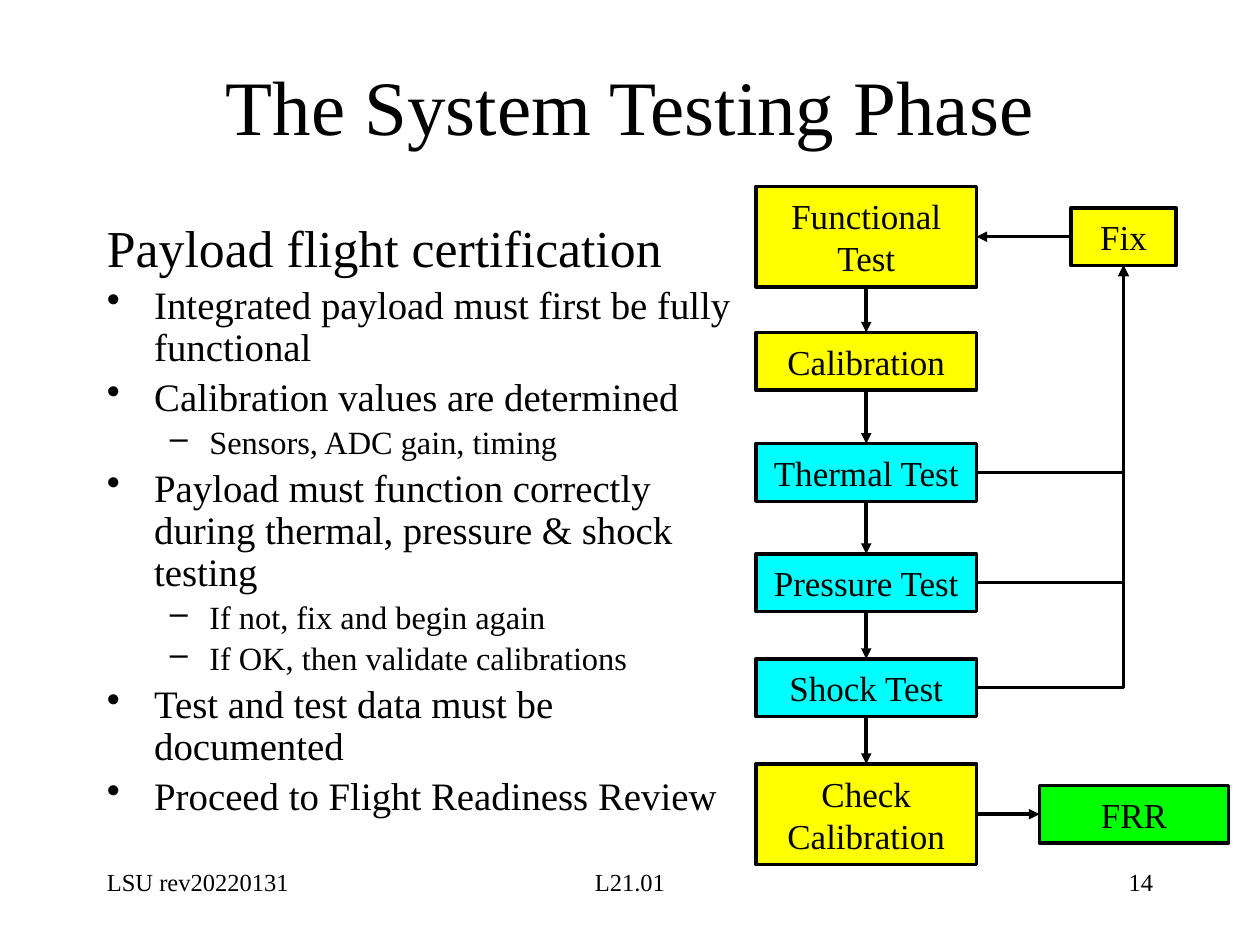
from itertools import pairwise

from lxml import etree
from pptx import Presentation
from pptx.dml.color import RGBColor
from pptx.enum.shapes import MSO_CONNECTOR, MSO_SHAPE
from pptx.enum.text import MSO_ANCHOR, PP_ALIGN
from pptx.oxml.ns import qn
from pptx.util import Pt

RECTANGLE = MSO_SHAPE.RECTANGLE
STRAIGHT, ELBOW = MSO_CONNECTOR.STRAIGHT, MSO_CONNECTOR.ELBOW
LEFT, CENTER, RIGHT = PP_ALIGN.LEFT, PP_ALIGN.CENTER, PP_ALIGN.RIGHT
TOP, MIDDLE = MSO_ANCHOR.TOP, MSO_ANCHOR.MIDDLE
TOP_SIDE, LEFT_SIDE, BOTTOM_SIDE, RIGHT_SIDE = range(4)

COLORS = {"ink": "000000", "step": "FFFF00", "test": "00FFFF", "done": "00FF00"}

# Outline level: (size, left margin, first-line indent, bullet, line spacing)
LEVELS = [
    (29.6, 0, 0, None, 1.0),
    (22.2, 27, -27, "•", 0.9),
    (18.5, 58.5, -22.5, "–", 0.9),
]
OUTLINE = [
    (0, "Payload flight certification"),
    (1, "Integrated payload must first be fully functional"),
    (1, "Calibration values are determined"),
    (2, "Sensors, ADC gain, timing"),
    (1, "Payload must function correctly during thermal, pressure & shock testing"),
    (2, "If not, fix and begin again"),
    (2, "If OK, then validate calibrations"),
    (1, "Test and test data must be documented"),
    (1, "Proceed to Flight Readiness Review"),
]

STEP_LEFT, STEP_WIDTH = 432, 126
ONE_LINE, TWO_LINES = 33, 57.5
STEPS = [
    ("Functional Test", 106.5, TWO_LINES, "step"),
    ("Calibration", 190, ONE_LINE, "step"),
    ("Thermal Test", 253.5, ONE_LINE, "test"),
    ("Pressure Test", 316.5, ONE_LINE, "test"),
    ("Shock Test", 376.5, ONE_LINE, "test"),
    ("Check Calibration", 436.5, TWO_LINES, "step"),
]
FOOTERS = [
    ("LSU rev20220131", 54, 150, LEFT),
    ("L21.01", 246, 228, CENTER),
    ("14", 516, 150, RIGHT),
]


class SlideBuilder:
    font_name = "Times New Roman"
    line_width = 2
    box_size = 20

    def __init__(self, slide):
        self.slide = slide

    def color(self, name):
        return RGBColor.from_string(COLORS[name])

    def style(self, paragraph, size, alignment=LEFT):
        paragraph.alignment = alignment
        for run in paragraph.runs:
            run.font.name = self.font_name
            run.font.size = Pt(size)
            run.font.color.rgb = self.color("ink")

    def frame(self, left, top, width, height, anchor=TOP):
        shape = self.slide.shapes.add_textbox(Pt(left), Pt(top), Pt(width), Pt(height))
        shape.text_frame.word_wrap = True
        shape.text_frame.vertical_anchor = anchor
        return shape.text_frame

    def text(self, text, left, top, width, height, size, alignment, anchor=TOP):
        text_frame = self.frame(left, top, width, height, anchor)
        text_frame.text = text
        self.style(text_frame.paragraphs[0], size, alignment)

    def outline(self, items, left, top, width, height):
        text_frame = self.frame(left, top, width, height)
        text_frame.text = "\n".join(text for _, text in items)
        for index, (level, _) in enumerate(items):
            paragraph = text_frame.paragraphs[index]
            size, margin, indent, bullet, spacing = LEVELS[level]
            if bullet:
                properties = paragraph._p.get_or_add_pPr()
                properties.set("marL", str(Pt(margin)))
                properties.set("indent", str(Pt(indent)))
                etree.SubElement(properties, qn("a:buChar")).set("char", bullet)
            paragraph.line_spacing = spacing
            if index:
                paragraph.space_before = Pt(round(size * 0.2, 1))
            self.style(paragraph, size)

    def box(self, text, left, top, width, height, fill):
        shape = self.slide.shapes.add_shape(
            RECTANGLE, Pt(left), Pt(top), Pt(width), Pt(height))
        shape.shadow.inherit = False
        shape.fill.solid()
        shape.fill.fore_color.rgb = self.color(fill)
        shape.line.color.rgb = self.color("ink")
        shape.line.width = Pt(self.line_width)
        text_frame = shape.text_frame
        text_frame.text = text
        text_frame.word_wrap = True
        text_frame.vertical_anchor = MIDDLE
        self.style(text_frame.paragraphs[0], self.box_size, CENTER)
        return shape

    def arrow(self, source, source_side, target, target_side, kind=STRAIGHT):
        """Join two boxes; an elbow arrow turns once, at a right angle."""
        connector = self.slide.shapes.add_connector(kind, 0, 0, 0, 0)
        connector.begin_connect(source, source_side)
        connector.end_connect(target, target_side)
        connector.line.color.rgb = self.color("ink")
        connector.line.width = Pt(self.line_width)
        properties = connector._element.spPr
        if kind == ELBOW:
            properties.find(qn("a:prstGeom")).set("prst", "bentConnector2")
        line = properties.find(qn("a:ln"))
        etree.SubElement(line, qn("a:tailEnd")).set("type", "triangle")
        etree.SubElement(properties, qn("a:effectLst"))


def main():
    presentation = Presentation()
    presentation.slide_width, presentation.slide_height = Pt(720), Pt(540)
    slide = presentation.slides.add_slide(presentation.slide_layouts[6])
    builder = SlideBuilder(slide)

    builder.text("The System Testing Phase", 113, 15, 494, 90, 44, CENTER, MIDDLE)
    builder.outline(OUTLINE, 54, 120, 372, 360)

    steps = [builder.box(text, STEP_LEFT, top, STEP_WIDTH, height, fill)
             for text, top, height, fill in STEPS]
    fix = builder.box("Fix", 612, 118.75, 60, ONE_LINE, "step")
    review = builder.box("FRR", 594, 448.75, 108, ONE_LINE, "done")

    for step, next_step in pairwise(steps):
        builder.arrow(step, BOTTOM_SIDE, next_step, TOP_SIDE)
    for test in steps[2:5]:
        builder.arrow(test, RIGHT_SIDE, fix, BOTTOM_SIDE, ELBOW)
    builder.arrow(fix, LEFT_SIDE, steps[0], RIGHT_SIDE)
    builder.arrow(steps[-1], RIGHT_SIDE, review, LEFT_SIDE)

    for text, left, width, alignment in FOOTERS:
        builder.text(text, left, 492, width, 36, 14, alignment)

    presentation.save("out.pptx")


if __name__ == "__main__":
    main()
